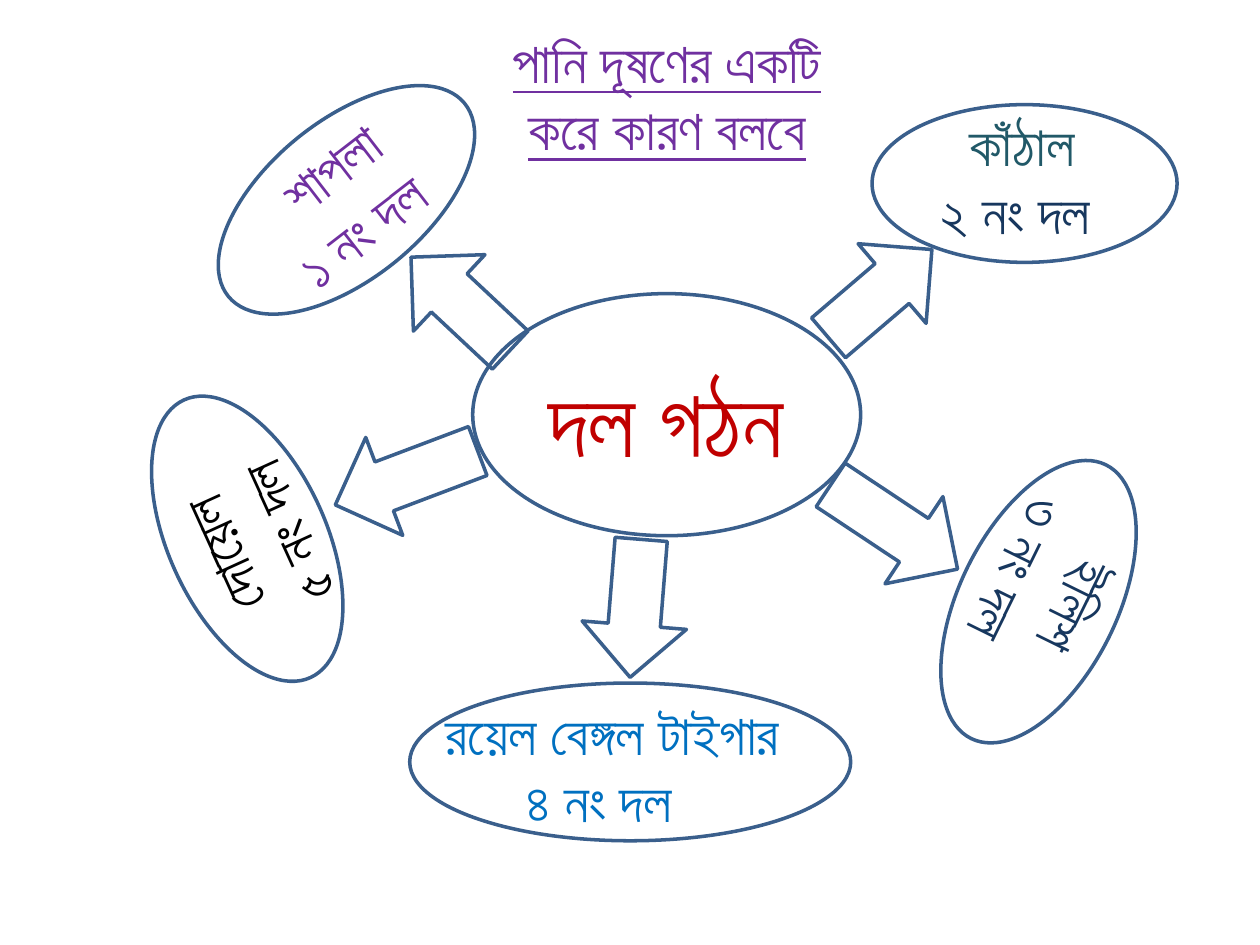
"""Builds the group-formation slide: a hub, five team ovals and arrows."""
import pptx
import pptx.util
import pptx.dml.color
import pptx.enum.shapes
import pptx.enum.text

Cm = pptx.util.Cm
Pt = pptx.util.Pt
RGBColor = pptx.dml.color.RGBColor
KIND = pptx.enum.shapes.MSO_SHAPE
CENTER = pptx.enum.text.PP_ALIGN.CENTER

BLUE = RGBColor(0x3A, 0x5F, 0x8C)
RED = RGBColor(0xC0, 0x00, 0x00)
PURPLE = RGBColor(0x70, 0x30, 0xA0)
TEAL = RGBColor(0x21, 0x59, 0x68)
NAVY = RGBColor(0x17, 0x37, 0x5E)
SKY = RGBColor(0x00, 0x70, 0xC0)
BLACK = RGBColor(0x00, 0x00, 0x00)
STEP = 0.28

deck = pptx.Presentation()
deck.slide_width, deck.slide_height = Cm(25.4), Cm(19.05)
slide = deck.slides.add_slide(deck.slide_layouts[6])


def outline(kind, left, top, width, height, turn=0):
    shape = slide.shapes.add_shape(kind, Cm(left), Cm(top), Cm(width), Cm(height))
    shape.rotation = turn
    shape.shadow.inherit = False
    shape.fill.background()
    shape.line.color.rgb = BLUE
    shape.line.width = Pt(2)


def write(lines, left, top, width, height, size=32, align=CENTER, turn=0):
    box = slide.shapes.add_textbox(Cm(left), Cm(top), Cm(width), Cm(height))
    box.rotation = turn
    frame = box.text_frame
    frame.word_wrap = True
    frame.text = "\n".join(text for text, color in lines)
    for para, (text, color) in zip(frame.paragraphs, lines):
        para.alignment = align
        para.font.size = Pt(size)
        para.font.name = "Roboto"
        para.font.color.rgb = color
    return frame


outline(KIND.OVAL, 9.53, 5.92, 7.82, 4.88)
write([("দল গঠন", RED)], 10.8, 7.19, 5.51, 2.57, 54, None)

teams = [
    ("শাপলা", "১ নং দল", PURPLE, PURPLE, (3.91, 2.44, 6.15), 320.7, 322.3, (4.78, 2.44, 4.65), 0, 2),
    ("কাঁঠাল", "২ নং দল", TEAL, NAVY, (17.58, 2.11, 6.15), 0, 0, (18.42, 2.11, 4.65), 1, 2),
    ("ইলিশ", "৩ নং দল", NAVY, NAVY, (17.86, 10.54, 6.15), 116.2, 116.2, (18.69, 10.54, 4.65), 1, 2),
    ("রয়েল বেঙ্গল টাইগার", "৪ নং দল", SKY, SKY, (8.26, 13.77, 8.89), 0, 0, (7.86, 13.97, 9.25), 1, 3),
    ("দোয়েল", "৫ নং দল", BLACK, BLACK, (1.91, 9.27, 6.15), 245.5, 245.5, (2.74, 9.27, 4.65), 1, 2),
]
for name, group, tint, shade, oval, tilt, turn, spot, first, last in teams:
    outline(KIND.OVAL, *oval, 3.18, tilt)
    frame = write([(name, tint), (group, shade)], *spot, 3, turn=turn)
    frame.margin_right = Cm(0.25 + STEP * last)
    props = frame.paragraphs[0]._p.get_or_add_pPr()
    props.set("marL", str(int(Cm(STEP * (last - first)))))
    props.set("indent", "0")

title = write([("পানি দূষণের একটি করে কারণ বলবে", PURPLE)], 9.32, 0.43, 8.26, 3)
title.paragraphs[0].font.underline = True

arrows = [
    (8.23, 4.75, 2.74, 133.1),
    (16.69, 4.55, 2.74, 229.5),
    (16.97, 9.09, 3.07, 303.6),
    (11.76, 10.87, 2.79, 4.6),
    (7.14, 8.1, 3.07, 69.3),
]
for left, top, height, turn in arrows:
    outline(KIND.DOWN_ARROW, left, top, 2.11, height, turn)

deck.save("out.pptx")
